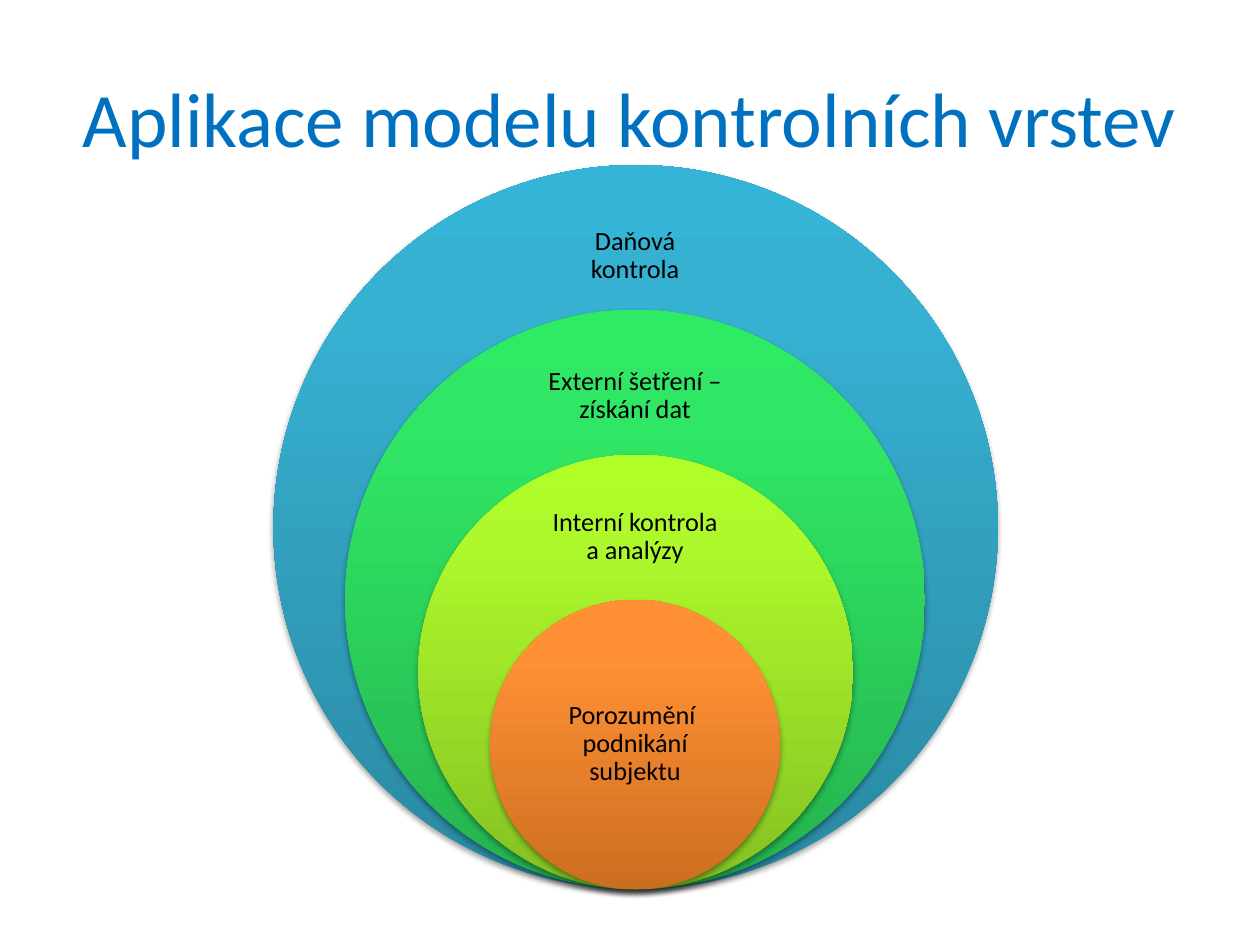
"""Build a slide of nested control layers under a title."""
from copy import deepcopy
from dataclasses import dataclass

from lxml import etree
from pptx import Presentation
from pptx import util as u
from pptx.dml.color import RGBColor
from pptx.enum import shapes, text
from pptx.oxml.ns import qn

PX = 9144


@dataclass(frozen=True)
class Theme:
    font: str = "Calibri"
    head: str = "0070C0"
    ink: str = "000000"
    big: int = 44
    small: int = 15
    fills: tuple = (
        ("2A88A2", "37B1D2", "34B4D6"),
        ("25B24E", "30E765", "2DEB64"),
        ("85C022", "ADF92C", "AFFE28"),
        ("CC6E20", "FF9034", "FF9136"),
    )
    stops: tuple = (0, 0.8, 1)


class Deck:
    def __init__(self, theme):
        self.theme = theme
        self.pres = Presentation()
        self.pres.slide_width, self.pres.slide_height = 1000 * PX, 750 * PX
        self.slide = self.pres.slides.add_slide(self.pres.slide_layouts[5])

    def place(self, item, box):
        item.left, item.top, item.width, item.height = (n * PX for n in box)

    def add_words(self, frame, words, size, color):
        frame.word_wrap = True
        frame.vertical_anchor = text.MSO_ANCHOR.MIDDLE
        para = frame.paragraphs[0]
        para.alignment = text.PP_ALIGN.CENTER
        run = para.add_run()
        run.text = words
        run.font.name = self.theme.font
        run.font.size = u.Pt(size)
        run.font.color.rgb = RGBColor.from_string(color)
        return para

    def title(self, words, box):
        item = self.slide.shapes.title
        self.place(item, box)
        self.add_words(item.text_frame, words, self.theme.big, self.theme.head)

    def group(self):
        return self.slide.shapes.add_group_shape()

    def disc(self, group, box, colors):
        disc = group.shapes.add_shape(
            shapes.MSO_SHAPE.OVAL, *(n * PX for n in box))
        disc.line.fill.background()
        disc.fill.gradient()
        disc.fill.gradient_angle = 90
        stops = disc.element.spPr.find(".//" + qn("a:gsLst"))
        stops.append(deepcopy(stops[0]))
        for stop, color, pos in zip(
                disc.fill.gradient_stops, colors, self.theme.stops):
            stop.color.rgb = RGBColor.from_string(color)
            stop.position = pos
        self.shade(disc)

    def shade(self, shape):
        shape.shadow.inherit = False
        glow = etree.SubElement(
            shape.element.spPr.find(qn("a:effectLst")), qn("a:outerShdw"),
            blurRad="40000", dist="23000", dir="5400000", rotWithShape="0")
        tint = etree.SubElement(glow, qn("a:srgbClr"), val=self.theme.ink)
        etree.SubElement(tint, qn("a:alpha"), val="35000")

    def label(self, group, words, box):
        item = group.shapes.add_textbox(*(n * PX for n in box))
        frame = item.text_frame
        frame.margin_left = frame.margin_right = 12 * PX
        frame.margin_top = frame.margin_bottom = 12 * PX
        para = self.add_words(frame, words, self.theme.small, self.theme.ink)
        para.line_spacing = 0.9

    def save(self):
        self.pres.save("out.pptx")


def main():
    deck = Deck(Theme())
    deck.title("Aplikace modelu kontrolních vrstev", (50, 30, 900, 125))
    layers = (
        ("Daňová kontrola", 160, 86),
        ("Externí šetření – získání dat", 273, 83),
        ("Interní kontrola a analýzy", 387, 78),
        ("Porozumění  podnikání subjektu", 533, 115),
    )
    step, base, mid, wide = 115, 706, 504, 162
    group = deck.group()
    for i, (words, top, high) in enumerate(layers):
        size = step * (len(layers) + 1 - i)
        box = (mid - size // 2, base - size, size, size)
        deck.disc(group, box, deck.theme.fills[i])
        deck.label(group, words, (mid - wide // 2, top, wide, high))
    deck.save()


if __name__ == "__main__":
    main()
